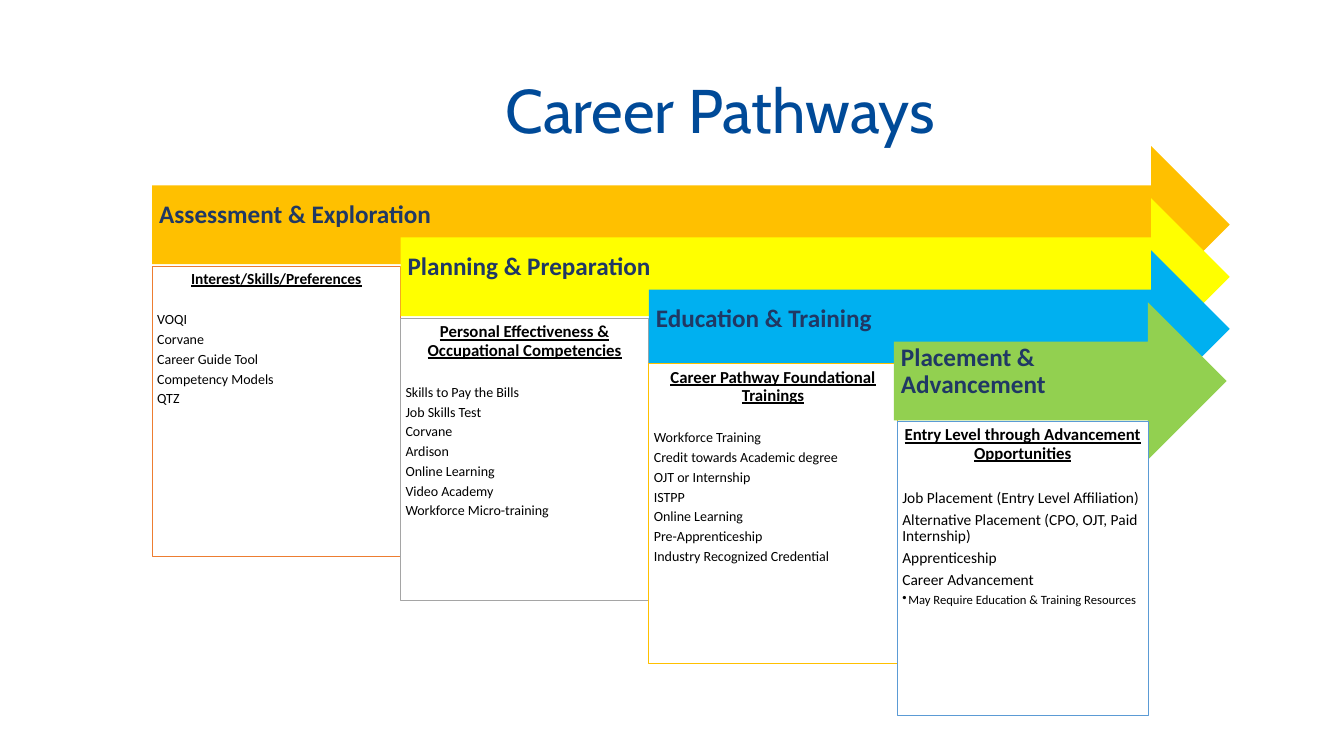
"""Build the Career Pathways slide: four stepped arrows, each with a list box."""
from dataclasses import dataclass

from lxml.etree import SubElement
from pptx import Presentation
from pptx.dml.color import RGBColor
from pptx.enum.shapes import MSO_SHAPE
from pptx.enum.text import MSO_ANCHOR, MSO_AUTO_SIZE, PP_ALIGN
from pptx.oxml.ns import qn
from pptx.shapes.autoshape import Shape
from pptx.slide import Slide
from pptx.text.text import TextFrame
from pptx.util import Pt

WHITE = RGBColor(0xFF, 0xFF, 0xFF)
BLACK = RGBColor(0x00, 0x00, 0x00)
BLUE = RGBColor(0x00, 0x4A, 0x98)
NAVY = RGBColor(0x20, 0x38, 0x64)
AMBER = RGBColor(0xFF, 0xC0, 0x00)
YELLOW = RGBColor(0xFF, 0xFF, 0x00)
CYAN = RGBColor(0x00, 0xB0, 0xF0)
GREEN = RGBColor(0x92, 0xD0, 0x50)
ORANGE = RGBColor(0xED, 0x7D, 0x31)
GRAY = RGBColor(0xA5, 0xA5, 0xA5)
STEEL = RGBColor(0x5B, 0x9B, 0xD5)

LEFT, TOP = 108.7, 104.4
PITCH, DROP = 177.4, 37.2
TALL = 112.3
GAP, LINE = 0.33, 1.1


@dataclass(frozen=True)
class Step:
    """One stage: its arrow, and the box of items under it."""
    name: str
    fill: RGBColor
    edge: RGBColor
    top: float
    high: float
    head: str
    items: tuple[str, ...]
    bold: float = 12
    size: float = 10
    wide: float = PITCH
    shift: float = 0
    tip: float = 878.4
    note: str = ""


STEPS = (
    Step("Assessment & Exploration", AMBER, ORANGE, 190.1, 207.4,
         "Interest/Skills/Preferences",
         ("VOQI", "Corvane", "Career Guide Tool", "Competency Models", "QTZ"),
         bold=11),
    Step("Planning & Preparation", YELLOW, GRAY, 227.5, 201.6,
         "Personal Effectiveness & Occupational Competencies",
         ("Skills to Pay the Bills", "Job Skills Test", "Corvane", "Ardison",
          "Online Learning", "Video Academy", "Workforce Micro-training")),
    Step("Education & Training", CYAN, AMBER, 259.9, 213.8,
         "Career Pathway Foundational Trainings",
         ("Workforce Training", "Credit towards Academic degree",
          "OJT or Internship", "ISTPP", "Online Learning",
          "Pre-Apprenticeship", "Industry Recognized Credential")),
    Step("Placement & Advancement", GREEN, STEEL, 301, 210.2,
         "Entry Level through Advancement Opportunities",
         ("Job Placement (Entry Level Affiliation)",
          "Alternative Placement (CPO, OJT, Paid Internship)",
          "Apprenticeship", "Career Advancement"),
         size=11, wide=179.3, shift=-2.3, tip=876.2,
         note="May Require Education & Training Resources"),
)


def style(thing: object, **form: object) -> None:
    """Set each named format value on an object."""
    for key, value in form.items():
        setattr(thing, key, value)


def write(frame: TextFrame, text: str, size: float, color: RGBColor,
          after: float, align: PP_ALIGN = PP_ALIGN.LEFT, bold: bool = False,
          under: bool = False, dot: bool = False) -> None:
    """Add one paragraph, using the empty first one when there is one."""
    para = frame.paragraphs[0]
    if para.runs:
        para = frame.add_paragraph()
    style(para, alignment=align, line_spacing=0.9, space_after=Pt(after))
    if dot:
        para.level = 1
        props = para._p.get_or_add_pPr()
        props.set("marL", str(Pt(4.3)))
        props.set("indent", str(-Pt(4.3)))
        SubElement(props, qn("a:buChar")).set("char", "•")
    run = para.add_run()
    run.text = text
    style(run.font, name="Calibri", size=Pt(size), bold=bold, underline=under)
    run.font.color.rgb = color


def block(slide: Slide, kind: MSO_SHAPE, place: tuple[float, ...],
          fill: RGBColor, pads: tuple[float, ...], anchor: MSO_ANCHOR) -> Shape:
    """Draw a filled shape that is ready for text."""
    shape = slide.shapes.add_shape(kind, *(Pt(part) for part in place))
    shape.shadow.inherit = False
    shape.fill.solid()
    shape.fill.fore_color.rgb = fill
    sides = ("margin_left", "margin_top", "margin_right", "margin_bottom")
    style(shape.text_frame, word_wrap=True, vertical_anchor=anchor,
          **{side: Pt(pad) for side, pad in zip(sides, pads)})
    return shape


def draw(slide: Slide, rank: int, step: Step) -> None:
    """Draw the arrow and the box of one step."""
    left = LEFT + rank * PITCH
    start = left + step.shift
    arrow = block(slide, MSO_SHAPE.RIGHT_ARROW,
                  (start, TOP + rank * DROP, step.tip - start, TALL),
                  step.fill, (5, 5, 20.2, 18), MSO_ANCHOR.MIDDLE)
    arrow.line.fill.background()
    write(arrow.text_frame, step.name, 18, NAVY, 18 * GAP, bold=True)

    box = block(slide, MSO_SHAPE.RECTANGLE,
                (left, step.top, step.wide, step.high),
                WHITE, (3.6,) * 4, MSO_ANCHOR.TOP)
    box.line.color.rgb = step.edge
    box.line.width = Pt(0.5)
    frame = box.text_frame
    after = step.bold * GAP + step.size * (LINE + GAP)
    write(frame, step.head, step.bold, BLACK, after, PP_ALIGN.CENTER,
          bold=True, under=True)
    for item in step.items:
        write(frame, item, step.size, BLACK, step.size * GAP)
    if step.note:
        write(frame, step.note, 9, BLACK, 1.4, dot=True)


def main() -> None:
    """Build and save the slide."""
    deck = Presentation()
    style(deck, slide_width=Pt(960), slide_height=Pt(540))
    slide = deck.slides.add_slide(deck.slide_layouts[5])
    title = slide.shapes.title
    style(title, left=Pt(134.6), top=Pt(28.8), width=Pt(759.6), height=Pt(104.4))
    title.text = "Career Pathways"
    style(title.text_frame, vertical_anchor=MSO_ANCHOR.MIDDLE, word_wrap=True,
          auto_size=MSO_AUTO_SIZE.NONE)
    para = title.text_frame.paragraphs[0]
    style(para, alignment=PP_ALIGN.CENTER, line_spacing=0.9)
    style(para.runs[0].font, name="Cabin", size=Pt(44))
    para.runs[0].font.color.rgb = BLUE
    for rank, step in enumerate(STEPS):
        draw(slide, rank, step)
    deck.save("out.pptx")


if __name__ == "__main__":
    main()
